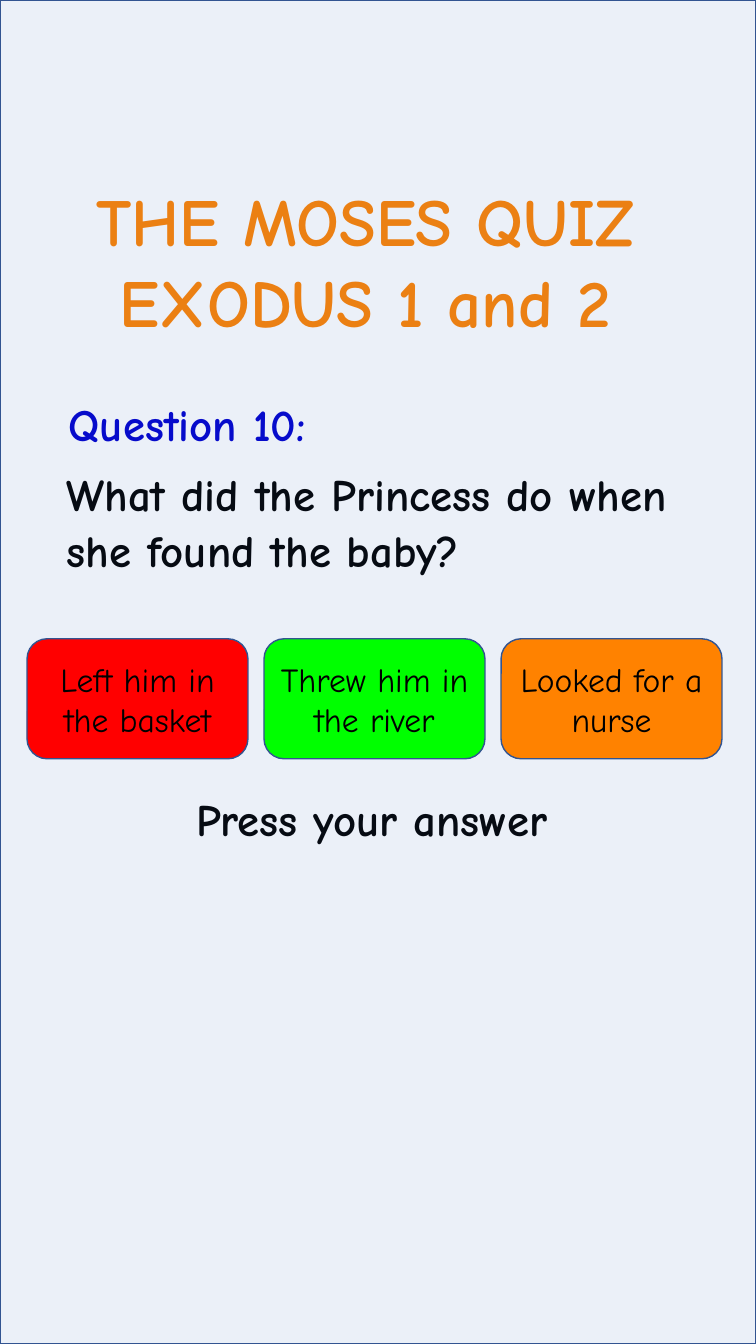
from lxml.etree import SubElement
from pptx import Presentation
from pptx.dml.color import RGBColor
from pptx.enum.shapes import MSO_SHAPE as Shape
from pptx.enum.text import MSO_ANCHOR as Anchor, MSO_AUTO_SIZE as AutoSize, PP_ALIGN as Align
from pptx.oxml.ns import qn
from pptx.util import Pt

FONT = "Comic Neue"
BLACK = RGBColor(0x00, 0x00, 0x00)
RED = RGBColor(0xFF, 0x00, 0x00)
GREEN = RGBColor(0x00, 0xFF, 0x00)
ORANGE = RGBColor(0xFF, 0x82, 0x00)
BLUE = RGBColor(0x00, 0x00, 0xCC)
TINT = RGBColor(0x44, 0x72, 0xC4)
OUTLINE = RGBColor(0x32, 0x54, 0x91)

PAGE_WIDTH, PAGE_HEIGHT = 540, 960
ANSWERS = [
    ("Left him in the basket", RED),
    ("Threw him in the river", GREEN),
    ("Looked for a nurse", ORANGE),
]


def place(shape, box):
    shape.left, shape.top, shape.width, shape.height = map(Pt, box)


def write(shape, text, size, color=BLACK, bold=True, align=Align.LEFT,
          anchor=Anchor.TOP, wrap=True, spacing=1.0, before=0):
    frame = shape.text_frame
    frame.text = text
    frame.word_wrap = wrap
    frame.auto_size = AutoSize.NONE
    frame.vertical_anchor = anchor
    for para in frame.paragraphs:
        para.alignment = align
        para.line_spacing = spacing
        para.space_before = Pt(before)
        for span in para.runs:
            font = span.font
            font.name, font.size, font.bold = FONT, Pt(size), bold
            font.color.rgb = color


def add_block(page, shape_type, box, fill):
    block = page.shapes.add_shape(shape_type, *map(Pt, box))
    block.shadow.inherit = False
    block.fill.solid()
    block.fill.fore_color.rgb = fill
    block.line.color.rgb = OUTLINE
    block.line.width = Pt(1)
    return block


def add_heading(page, box):
    title = page.shapes.title
    place(title, box)
    write(title, "THE MOSES QUIZ\nEXODUS 1 and 2", 48, ORANGE,
          align=Align.CENTER, wrap=False)


def add_question(page, box):
    left, top, width, height = box
    label = page.shapes.add_textbox(*map(Pt, (left - 16, top, 219, 46)))
    write(label, "Question 10:", 32, BLUE, align=Align.CENTER, wrap=False)
    question = page.placeholders[1]
    place(question, (left, top + 48, width, height - 48))
    write(question, "What did the Princess do when she found the baby?", 32,
          spacing=Pt(40), before=7.5)


def add_prompt(page, box):
    prompt = page.shapes.add_textbox(*map(Pt, box))
    write(prompt, "Press your answer", 32, spacing=0.9, before=7.5)


def add_tint(page, box):
    """Lay a nearly transparent blue sheet over the box."""
    sheet = add_block(page, Shape.RECTANGLE, box, TINT)
    color = sheet.fill._xPr.find(qn("a:solidFill"))[0]
    SubElement(color, qn("a:alpha"), val="10000")


def add_answers(page, box):
    left, top, width, height = box
    gap = 11.5
    button_width = (width - gap * (len(ANSWERS) - 1)) / len(ANSWERS)
    for index, (answer, color) in enumerate(ANSWERS):
        button_left = left + index * (button_width + gap)
        button = add_block(page, Shape.ROUNDED_RECTANGLE,
                           (button_left, top, button_width, height), color)
        write(button, answer, 24, bold=False, align=Align.CENTER, anchor=Anchor.MIDDLE)


def main():
    deck = Presentation()
    deck.slide_width, deck.slide_height = Pt(PAGE_WIDTH), Pt(PAGE_HEIGHT)
    page = deck.slides.add_slide(deck.slide_layouts[0])
    add_heading(page, (13, 124.5, 496, 124))
    add_question(page, (40.3, 280, 458, 153.5))
    add_prompt(page, (133, 566, 304, 52))
    add_tint(page, (0, 0, PAGE_WIDTH, PAGE_HEIGHT))
    add_answers(page, (19.3, 456.3, 496.4, 85.7))
    deck.save("out.pptx")


if __name__ == "__main__":
    main()
